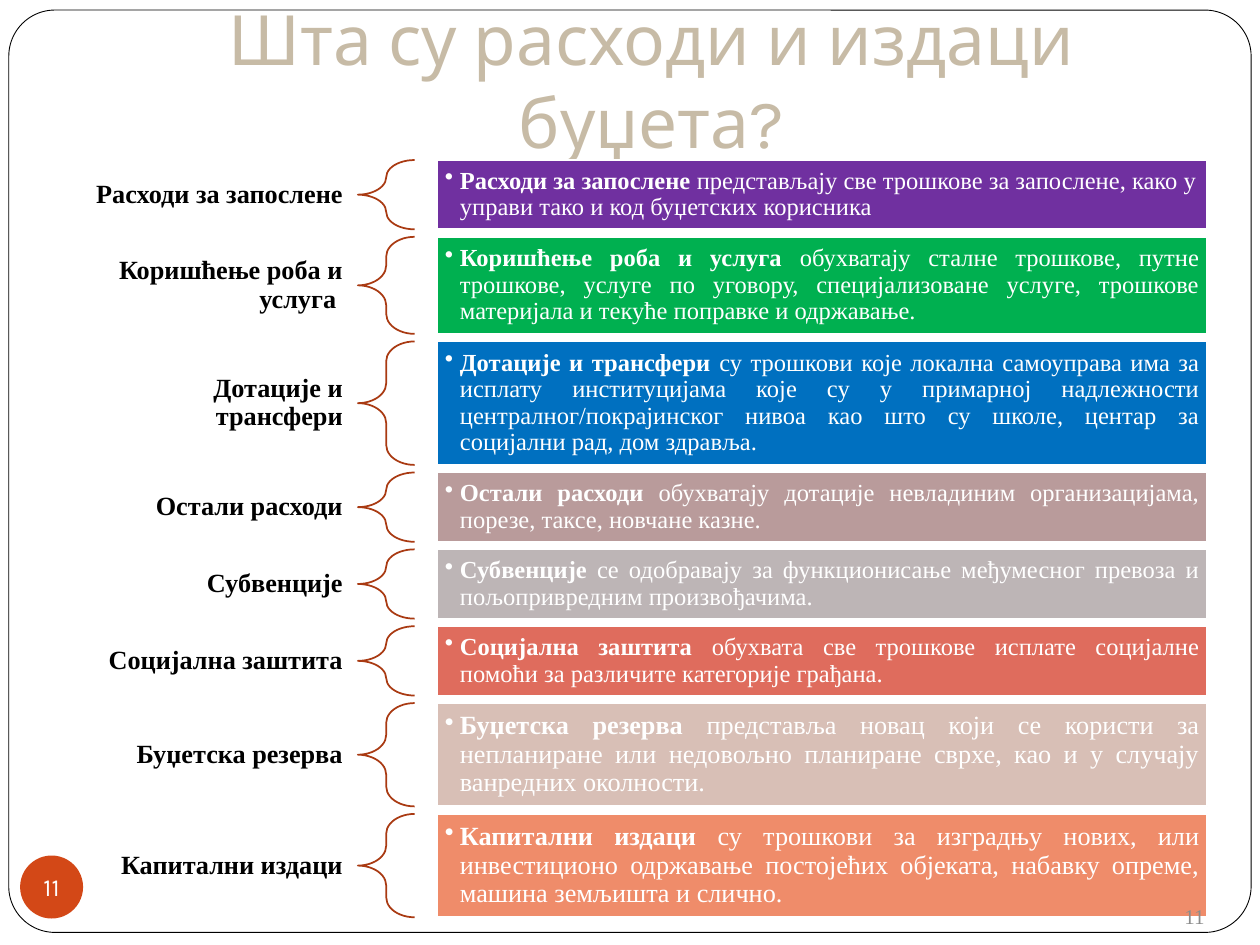
from lxml import etree
from pptx import Presentation
from pptx.dml.color import RGBColor
from pptx.enum.shapes import MSO_SHAPE
from pptx.enum.text import MSO_ANCHOR, PP_ALIGN
from pptx.oxml.ns import qn
from pptx.util import Inches, Pt

LEFT, CENTER, RIGHT = PP_ALIGN.LEFT, PP_ALIGN.CENTER, PP_ALIGN.RIGHT
JUSTIFY = PP_ALIGN.JUSTIFY
MIDDLE, TOP = MSO_ANCHOR.MIDDLE, MSO_ANCHOR.TOP
ROUNDED, OVAL = MSO_SHAPE.ROUNDED_RECTANGLE, MSO_SHAPE.OVAL
RECTANGLE, BRACE = MSO_SHAPE.RECTANGLE, MSO_SHAPE.LEFT_BRACE

HEADING_FONT, BODY_FONT = "Karla", "Times New Roman"
PAGE_NUMBER = "11"

# Columns as (left, width), in inches
LABEL_COLUMN, BRACE_COLUMN, BAR_COLUMN = (0.59, 2.25), (2.84, 0.45), (3.47, 6.11)
FIRST_ROW, ROW_GAP = 1.27, 0.06

# Label, term in the bar, explanation, row height, bar colour, text size, alignment
ROWS = [
    ("Расходи за запослене", "Расходи за запослене ",
     "представљају све трошкове за запослене, како у управи тако и код "
     "буџетских корисника", 0.55, "7030A0", 14, LEFT),
    ("Коришћење роба и услуга ", "Коришћење роба и услуга ",
     "обухватају сталне трошкове, путне трошкове, услуге по уговору, "
     "специјализоване услуге, трошкове материјала и текуће поправке и "
     "одржавање.", 0.77, "00B050", 14, JUSTIFY),
    ("Дотације и трансфери", "Дотације и трансфери ",
     "су трошкови које локална самоуправа има за исплату институцијама које "
     "су у примарној надлежности централног/покрајинског нивоа као што су "
     "школе, центар за социјални рад, дом здравља. ",
     0.98, "0070C0", 14, JUSTIFY),
    ("Остали расходи", "Остали расходи ",
     "обухватају дотације невладиним организацијама, порезе, таксе, новчане "
     "казне.", 0.55, "B99B9B", 14, JUSTIFY),
    ("Субвенције", "Субвенције",
     " сe одобравају за функционисање међумесног превоза и "
     "пољопривредним произвођачима. ", 0.55, "BDB5B6", 14, JUSTIFY),
    ("Социјална заштита", "Социјална заштита ",
     "обухвата све трошкове исплате социјалне помоћи за различите категорије "
     "грађана.", 0.55, "DF6C5D", 14, JUSTIFY),
    ("Буџетска резерва", "Буџетска резерва ",
     "представља новац који се користи за непланиране или недовољно "
     "планиране сврхе, као и у случају ванредних околности.",
     0.82, "D8BFB6", 15, JUSTIFY),
    ("Капитални издаци", "Капитални издаци ",
     "су трошкови за изградњу нових, или инвестиционо одржавање постојећих "
     "објеката, набавку опреме, машина земљишта и слично.",
     0.82, "EF8C6A", 15, JUSTIFY),
]


def color(value):
    return RGBColor.from_string(value)


def add_shape(page, kind, box, fill=None, line=None, weight=1):
    shape = page.shapes.add_shape(kind, *map(Inches, box))
    shape.shadow.inherit = False
    if fill:
        shape.fill.solid()
        shape.fill.fore_color.rgb = color(fill)
    else:
        shape.fill.background()
    if line:
        shape.line.color.rgb = color(line)
        shape.line.width = Pt(weight)
    else:
        shape.line.fill.background()
    return shape


def write(shape, spans, size, font, ink, align, anchor=MIDDLE,
          insets=(0.1, 0.05), wrap=True, spacing=None):
    """Fill a shape with one paragraph of (text, bold) spans and return it."""
    frame = shape.text_frame
    frame.word_wrap = wrap
    frame.vertical_anchor = anchor
    frame.margin_left = frame.margin_right = Inches(insets[0])
    frame.margin_top = frame.margin_bottom = Inches(insets[1])
    para = frame.paragraphs[0]
    para.alignment = align
    if spacing:
        para.line_spacing = spacing
    for text, bold in spans:
        span = para.add_run()
        span.text = text
        span.font.size, span.font.name, span.font.bold = Pt(size), font, bold
        span.font.color.rgb = color(ink)
    return para


def add_text(page, box, *args, **options):
    return write(page.shapes.add_textbox(*map(Inches, box)), *args, **options)


def add_bullet(para, indent):
    properties = para._p.get_or_add_pPr()
    properties.set("marL", str(Inches(indent)))
    properties.set("indent", str(-Inches(indent)))
    etree.SubElement(properties, qn("a:buChar")).set("char", "•")


def add_background(page, box):
    frame = add_shape(page, ROUNDED, box, "FFFFFF", "000000", 0.5)
    frame.adjustments[0] = 0.05


def add_badge(page, box):
    badge = add_shape(page, OVAL, box, "D34817")
    write(badge, [(PAGE_NUMBER, False)], 14, HEADING_FONT, "FFFFFF", CENTER,
          insets=(0, 0), wrap=False)


def add_expense_row(page, top, row):
    label, term, explanation, height, fill, size, align = row

    def cell(column):
        return column[0], top, column[1], height

    add_text(page, cell(LABEL_COLUMN), [(label, True)], 15, BODY_FONT, "000000",
             RIGHT, insets=(0.12, 0.04), spacing=0.9)
    brace = add_shape(page, BRACE, cell(BRACE_COLUMN), line="A93A12")
    brace.adjustments[0] = 0.35
    bar = add_shape(page, RECTANGLE, cell(BAR_COLUMN), fill, "FFFFFF")
    para = write(bar, [(term, True), (explanation, False)], size, BODY_FONT,
                 "FFFFFF", align, insets=(0.06, 0.06), spacing=0.9)
    add_bullet(para, 0.12)


def add_expense_list(page, top):
    for row in ROWS:
        add_expense_row(page, top, row)
        top += row[3] + ROW_GAP


def main():
    deck = Presentation()
    deck.slide_width, deck.slide_height = Inches(10), Inches(7.5)
    page = deck.slides.add_slide(deck.slide_layouts[6])
    add_background(page, (0.07, 0.08, 9.86, 7.32))
    add_badge(page, (0.16, 6.79, 0.5, 0.5))
    add_text(page, (0.67, 0.29, 9, 0.68),
             [("Шта су расходи и издаци буџета?", False)],
             39.6, HEADING_FONT, "C7BBA6", CENTER)
    add_expense_list(page, FIRST_ROW)
    add_text(page, (7.33, 7.12, 2.33, 0.4), [(PAGE_NUMBER, False)],
             12, BODY_FONT, "8C8C8C", RIGHT, anchor=TOP)
    deck.save("out.pptx")


if __name__ == "__main__":
    main()
